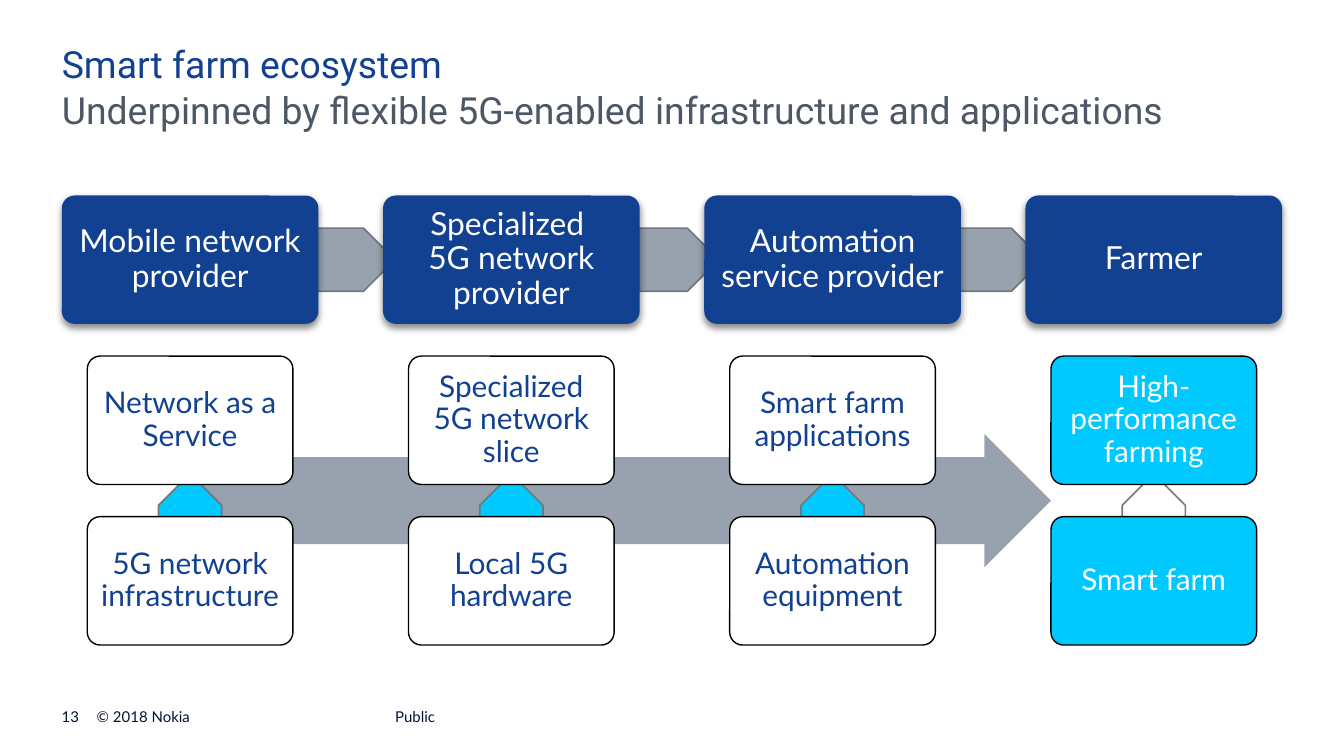
from dataclasses import dataclass

from lxml.etree import SubElement
from pptx import Presentation
from pptx.dml.color import RGBColor
from pptx.enum.shapes import MSO_SHAPE as Shape
from pptx.enum.text import MSO_ANCHOR as Anchor, MSO_AUTO_SIZE as AutoSize, PP_ALIGN as Align
from pptx.oxml.ns import qn
from pptx.util import Emu, Pt

EMU_PER_PX = 4572  # 200 px to the inch


@dataclass(frozen=True)
class Theme:
    heading_font: str = "Roboto"
    body_font: str = "Lato"
    navy: str = "124191"
    cyan: str = "00C9FF"
    steel: str = "98A2AE"
    outline: str = "707881"
    slate: str = "4D5766"
    ink: str = "001135"
    white: str = "FFFFFF"
    black: str = "000000"
    heading_size: int = 20
    role_size: int = 17
    card_size: int = 16
    footer_size: int = 8


THEME = Theme()

# Role, offering and what it is built on, one entry for each column
COLUMNS = [
    ("Mobile network provider", "Network as a Service", "5G network infrastructure"),
    ("Specialized \v5G network provider", "Specialized\v5G network slice", "Local 5G hardware"),
    ("Automation service provider", "Smart farm applications", "Automation equipment"),
    ("Farmer", "High-performance\vfarming", "Smart farm"),
]
COLUMN_PITCH, COLUMN_WIDTH, BOX_HEIGHT = 478, 382, 191
CARD_INSET, CARD_PITCH = 38, 239
PLATE_WIDTH, PLATE_HEIGHT = 140, 94


def px(value):
    return Emu(round(value * EMU_PER_PX))


def color(value):
    return RGBColor.from_string(value)


def write(shape, text, font=THEME.body_font, size=THEME.card_size, ink=THEME.ink,
          align=Align.LEFT, anchor=Anchor.TOP, insets=(0, 0), spacing=1.0):
    frame = shape.text_frame
    frame.word_wrap = True
    frame.auto_size = AutoSize.NONE
    frame.vertical_anchor = anchor
    frame.margin_left = frame.margin_right = px(insets[0])
    frame.margin_top = frame.margin_bottom = px(insets[1])
    frame.text = text
    paragraph = frame.paragraphs[0]
    paragraph.alignment = align
    paragraph.line_spacing = spacing
    paragraph.space_before = Pt(0)
    paragraph.font.name = font
    paragraph.font.size = Pt(size)
    paragraph.font.color.rgb = color(ink)


def add_text(slide, box, text, **style):
    write(slide.shapes.add_textbox(*map(px, box)), text, **style)


def add_block(slide, kind, box, fill, line=None, width=0.9):
    shape = slide.shapes.add_shape(kind, *map(px, box))
    shape.shadow.inherit = False
    shape.fill.solid()
    shape.fill.fore_color.rgb = color(fill)
    if line:
        shape.line.color.rgb = color(line)
        shape.line.width = Pt(width)
    else:
        shape.line.fill.background()
    return shape


def add_card(slide, box, text, fill, ink, size, line=None):
    card = add_block(slide, Shape.ROUNDED_RECTANGLE, box, fill, line, 0.75)
    card.adjustments[0] = 0.1
    write(card, text, size=size, ink=ink, align=Align.CENTER,
          anchor=Anchor.MIDDLE, insets=(6, 4), spacing=0.9)
    return card


def add_drop_shadow(shape):
    effects = shape.element.spPr.find(qn("a:effectLst"))
    shadow = SubElement(effects, qn("a:outerShdw"), blurRad=str(Pt(4)), dist=str(Pt(2)),
                        dir="5400000", algn="ctr", rotWithShape="0")
    tint = SubElement(shadow, qn("a:srgbClr"), val=THEME.black)
    SubElement(tint, qn("a:alpha"), val="45000")


def add_heading(slide, left, top, width, height):
    title = slide.shapes.title
    title.left, title.top, title.width, title.height = map(px, (left, top, width, height))
    style = dict(font=THEME.heading_font, size=THEME.heading_size)
    write(title, "Smart farm ecosystem", ink=THEME.navy, **style)
    add_text(slide, (left, top + height, width, height),
             "Underpinned by flexible 5G-enabled infrastructure and applications",
             ink=THEME.slate, **style)


def add_roles(slide, left, top):
    # Links go behind the boxes, at a slightly wider pitch than the columns
    for index in range(len(COLUMNS) - 1):
        box = (left + 356 + index * 482, top + (BOX_HEIGHT - PLATE_HEIGHT) / 2,
               PLATE_WIDTH, PLATE_HEIGHT)
        add_block(slide, Shape.PENTAGON, box, THEME.steel, THEME.outline)
    for index, (role, _, _) in enumerate(COLUMNS):
        box = (left + index * COLUMN_PITCH, top, COLUMN_WIDTH, BOX_HEIGHT)
        add_drop_shadow(add_card(slide, box, role, THEME.navy, THEME.white, THEME.role_size))


def add_offerings(slide, left, top):
    # Flow arrow behind all the cards
    flow = add_block(slide, Shape.RIGHT_ARROW, (left + 190, top + 116, 1282, 198), THEME.steel)
    flow.adjustments[0] = 0.654
    flow.adjustments[1] = 0.5

    for index, (_, offering, foundation) in enumerate(COLUMNS):
        is_farmer = index == len(COLUMNS) - 1
        column_left = left + index * COLUMN_PITCH
        # Upward link between the two cards
        link_box = (column_left + (COLUMN_WIDTH - PLATE_WIDTH) / 2, top + 198,
                    PLATE_WIDTH, PLATE_HEIGHT)
        link = add_block(slide, Shape.PENTAGON, link_box,
                         THEME.white if is_farmer else THEME.cyan, THEME.outline)
        link.rotation = 270
        # Offering above its foundation
        fill, ink = (THEME.cyan, THEME.white) if is_farmer else (THEME.white, THEME.navy)
        for row, text in enumerate((offering, foundation)):
            box = (column_left + CARD_INSET, top + row * CARD_PITCH,
                   COLUMN_WIDTH - 2 * CARD_INSET, BOX_HEIGHT)
            add_card(slide, box, text, fill, ink, THEME.card_size, THEME.black)


def add_footer(slide, left, top, height):
    for offset, width, text in ((0, 32, "13"), (52, 394, "© 2018 Nokia"), (496, 564, "Public")):
        add_text(slide, (left + offset, top, width, height), text,
                 size=THEME.footer_size, anchor=Anchor.BOTTOM)


def main():
    presentation = Presentation()
    presentation.slide_width, presentation.slide_height = px(2000), px(1125)
    slide = presentation.slides.add_slide(presentation.slide_layouts[5])
    add_heading(slide, 92, 62, 1818, 68)
    add_roles(slide, 92, 291)
    add_offerings(slide, 92, 530)
    add_footer(slide, 92, 1054, 26)
    presentation.save("out.pptx")


if __name__ == "__main__":
    main()
